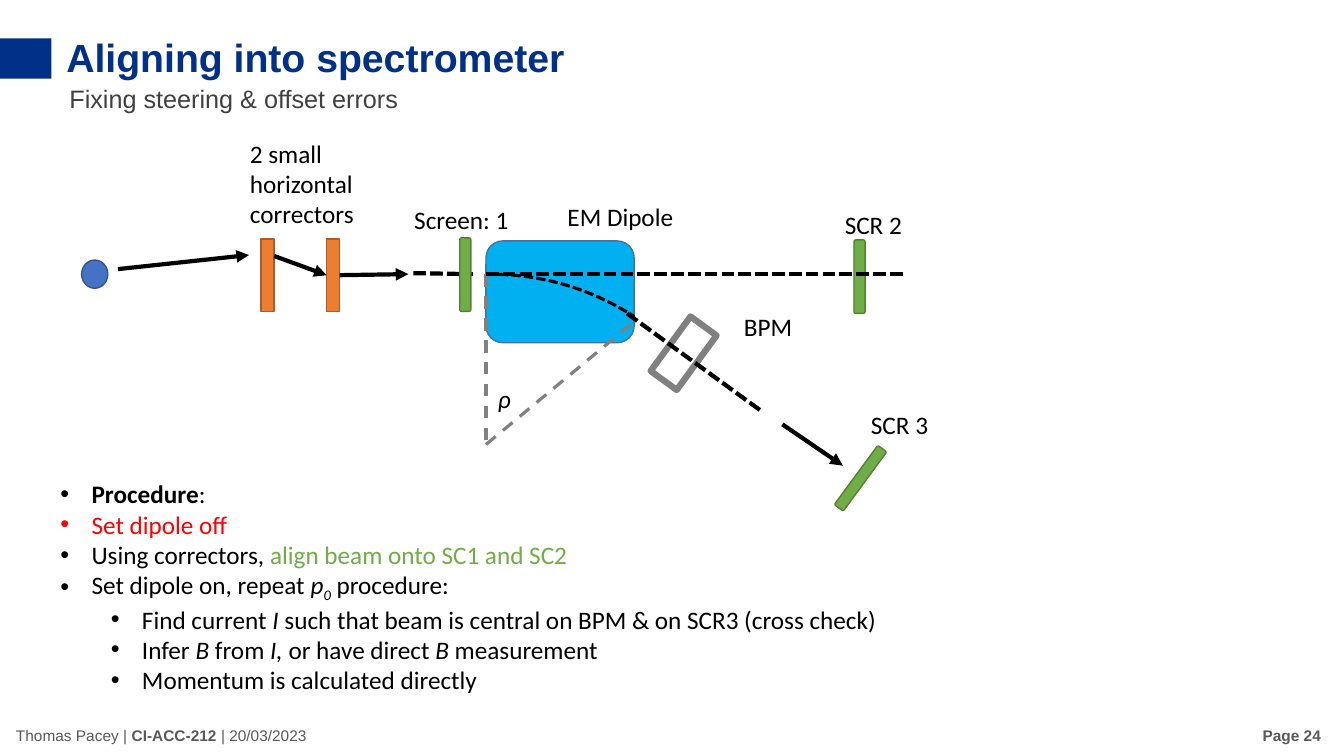
from dataclasses import dataclass

from pptx import Presentation
from pptx.dml.color import RGBColor
from pptx.enum.dml import MSO_LINE
from pptx.enum.shapes import MSO_CONNECTOR, MSO_SHAPE
from pptx.enum.text import MSO_ANCHOR, PP_ALIGN
from pptx.oxml.ns import qn
from pptx.util import Inches, Pt
from lxml.etree import SubElement


@dataclass(frozen=True)
class Theme:
    """Colours, fonts and type sizes of the slide."""
    navy: str = "003088"
    black: str = "000000"
    white: str = "FFFFFF"
    subtitle: str = "404040"
    footer: str = "595959"
    gray: str = "808080"
    red: str = "FF0000"
    source: str = "4472C4"
    source_edge: str = "325491"
    screen: str = "70AD47"
    screen_edge: str = "538035"
    dipole: str = "00B0F0"
    dipole_edge: str = "43739E"
    corrector: str = "ED7D31"
    corrector_edge: str = "AF5C24"
    heading_font: str = "Arial"
    body_font: str = "Calibri"
    title_size: int = 28
    body_size: int = 18
    footer_size: int = 11


T = Theme()

PROCEDURE = [
    (0, [("Procedure", "b"), (":", "")]),
    (0, [("Set dipole off", "", T.red)]),
    (0, [("Using correctors, ", ""), ("align beam onto SC1 and SC2", "", T.screen)]),
    (0, [("Set dipole on, repeat ", ""), ("p", "i"), ("0", "i_"), (" procedure:", "")]),
    (1, [("Find current ", ""), ("I ", "i"),
         ("such that beam is central on BPM & on SCR3 (cross check)", "")]),
    (1, [("Infer ", ""), ("B ", "i"), ("from ", ""), ("I, ", "i"),
         ("or have direct ", ""), ("B", "i"), (" measurement", "")]),
    (1, [("Momentum is calculated directly", "")]),
]


def style_run(r, style="", color=T.black, size=T.body_size, font=T.body_font):
    """Format a run; style may hold b (bold), i (italic) and _ (subscript)."""
    r.font.name = font
    r.font.size = Pt(size)
    r.font.color.rgb = RGBColor.from_string(color)
    r.font.bold = "b" in style
    r.font.italic = "i" in style
    if "_" in style:
        r.font._element.set("baseline", "-25000")


def add_runs(p, runs, **fmt):
    """Append (text, style[, colour]) runs to a paragraph."""
    for text, style, *color in runs:
        r = p.add_run()
        r.text = text
        style_run(r, style, *color, **fmt)


def add_box(s, x, y, w, h, wrap=True):
    """Add an empty text box and return its text frame."""
    tf = s.shapes.add_textbox(Inches(x), Inches(y), Inches(w), Inches(h)).text_frame
    tf.word_wrap = wrap
    return tf


def add_label(s, text, x, y, w, h=0.4, style="", wrap=True, **fmt):
    """Add a text box with one uniformly formatted paragraph."""
    tf = add_box(s, x, y, w, h, wrap)
    tf.text = text
    style_run(tf.paragraphs[0].runs[0], style, **fmt)
    return tf


def add_bullets(s, items, x, y, w, h):
    """Add a two-level bulleted list."""
    tf = add_box(s, x, y, w, h)
    for i, (level, runs) in enumerate(items):
        p = tf.add_paragraph() if i else tf.paragraphs[0]
        p.level = level
        pPr = p._p.get_or_add_pPr()
        pPr.set("marL", str(Inches(0.31 + 0.5 * level)))
        pPr.set("indent", str(Inches(-0.31)))
        SubElement(pPr, qn("a:buFont")).set("typeface", "Arial")
        SubElement(pPr, qn("a:buChar")).set("char", "•")
        add_runs(p, runs)


def add_part(s, kind, x, y, w, h, fill, edge=None, width=1, rotation=0):
    """Add a filled shape, outlined when an edge colour is given."""
    sp = s.shapes.add_shape(kind, Inches(x), Inches(y), Inches(w), Inches(h))
    sp.shadow.inherit = False
    sp.rotation = rotation
    sp.fill.solid()
    sp.fill.fore_color.rgb = RGBColor.from_string(fill)
    if edge:
        sp.line.color.rgb = RGBColor.from_string(edge)
        sp.line.width = Pt(width)
    else:
        sp.line.fill.background()
    return sp


def add_screen(s, x, y, rotation=0):
    """Add a green beam screen."""
    return add_part(s, MSO_SHAPE.ROUNDED_RECTANGLE, x, y, 0.11, 0.73,
                    T.screen, T.screen_edge, rotation=rotation)


def add_line(s, start, end, color=T.black, width=3, dash=None):
    """Add a straight line between two points."""
    c = s.shapes.add_connector(MSO_CONNECTOR.STRAIGHT, *map(Inches, (*start, *end)))
    c.line.color.rgb = RGBColor.from_string(color)
    c.line.width = Pt(width)
    if dash:
        c.line.dash_style = dash
    SubElement(c._element.spPr, qn("a:effectLst"))
    return c


def add_arrow(s, start, end):
    """Add a beam arrow with a triangular head."""
    c = add_line(s, start, end)
    SubElement(c.line._get_or_add_ln(), qn("a:tailEnd")).set("type", "triangle")
    return c


def add_bend(s, x, y, w, h, start, end):
    """Add the dashed arc of the beam inside the dipole."""
    sp = s.shapes.add_shape(MSO_SHAPE.ARC, Inches(x), Inches(y), Inches(w), Inches(h))
    sp.shadow.inherit = False
    sp.adjustments[0], sp.adjustments[1] = start, end
    sp.fill.background()
    sp.line.color.rgb = RGBColor.from_string(T.black)
    sp.line.width = Pt(2.25)
    sp.line.dash_style = MSO_LINE.SQUARE_DOT


def add_frame(s):
    """Add title, subtitle, accent block and footer."""
    footer = dict(color=T.footer, size=T.footer_size, font=T.heading_font)
    tf = add_box(s, 0.06, 7.1, 4.05, 0.4)
    tf.vertical_anchor = MSO_ANCHOR.MIDDLE
    add_runs(tf.paragraphs[0], [("Thomas Pacey | ", "", T.footer),
                                ("CI-ACC-212 ", "b", T.footer),
                                ("| 20/03/2023", "", T.footer)],
             size=T.footer_size, font=T.heading_font)
    tf = add_label(s, "Page 24", 10.2, 7.1, 3, style="b", **footer)
    tf.vertical_anchor = MSO_ANCHOR.MIDDLE
    tf.paragraphs[0].alignment = PP_ALIGN.RIGHT
    add_label(s, "Aligning into spectrometer", 0.56, 0.28, 5.2, 0.57, "b", False,
              color=T.navy, size=T.title_size, font=T.heading_font)
    add_part(s, MSO_SHAPE.RECTANGLE, 0, 0.38, 0.51, 0.4, T.navy)
    add_label(s, "Fixing steering & offset errors", 0.59, 0.78, 6.11,
              color=T.subtitle, font=T.heading_font)


def add_beamline(s):
    """Add the beamline from source to the three screens."""
    dots = MSO_LINE.SQUARE_DOT
    add_part(s, MSO_SHAPE.OVAL, 0.81, 2.58, 0.26, 0.28, T.source, T.source_edge)
    add_part(s, MSO_SHAPE.RECTANGLE, 6.62, 3.17, 0.32, 0.67, T.white, T.gray, 4.5, 36.2)
    add_arrow(s, (1.17, 2.67), (2.47, 2.53))
    add_arrow(s, (7.76, 4.21), (8.36, 4.62))
    add_screen(s, 8.48, 4.38, 36.3)
    add_part(s, MSO_SHAPE.ROUNDED_RECTANGLE, 4.82, 2.39, 1.47, 1.01,
             T.dipole, T.dipole_edge)
    add_bend(s, 2.33, 2.72, 5.08, 4.92, 161.35, 182.92)
    add_line(s, (4.1, 2.71), (4.69, 2.72), dash=dots)
    add_line(s, (6.22, 3.11), (7.54, 4.07), dash=dots)
    for start, end in [((4.82, 2.72), (4.82, 4.41)), ((4.82, 4.41), (6.29, 3.19))]:
        add_line(s, start, end, T.gray, 2.25, MSO_LINE.DASH)
    add_screen(s, 4.56, 2.36)
    add_screen(s, 8.47, 2.38)
    add_line(s, (4.82, 2.72), (8.97, 2.72), dash=dots)
    _, second = [add_part(s, MSO_SHAPE.RECTANGLE, x, 2.37, 0.13, 0.72,
                          T.corrector, T.corrector_edge) for x in (2.59, 3.24)]
    add_arrow(s, (2.72, 2.54), (3.24, 2.73)).end_connect(second, 1)
    add_arrow(s, (3.37, 2.73), (4.05, 2.72)).begin_connect(second, 3)


def main():
    """Build and save the slide."""
    prs = Presentation()
    prs.slide_width, prs.slide_height = Inches(13.33), Inches(7.5)
    s = prs.slides.add_slide(prs.slide_layouts[6])
    add_frame(s)
    add_beamline(s)
    for text, x, y, w in [("BPM", 7.28, 3.04, 4.02), ("SCR 3", 8.54, 4.01, 4.36),
                          ("EM Dipole", 5.53, 1.95, 4.02),
                          ("Screen: 1", 4.01, 1.98, 1.15), ("SCR 2", 8.28, 2.03, 1.15)]:
        add_label(s, text, x, y, w)
    add_label(s, "ρ", 4.84, 3.75, 0.34, style="i")
    add_label(s, "2 small horizontal correctors", 2.38, 1.32, 1.35, 1.01)
    add_bullets(s, PROCEDURE, 0.5, 4.7, 9.05, 2.52)
    prs.save("out.pptx")


if __name__ == "__main__":
    main()
